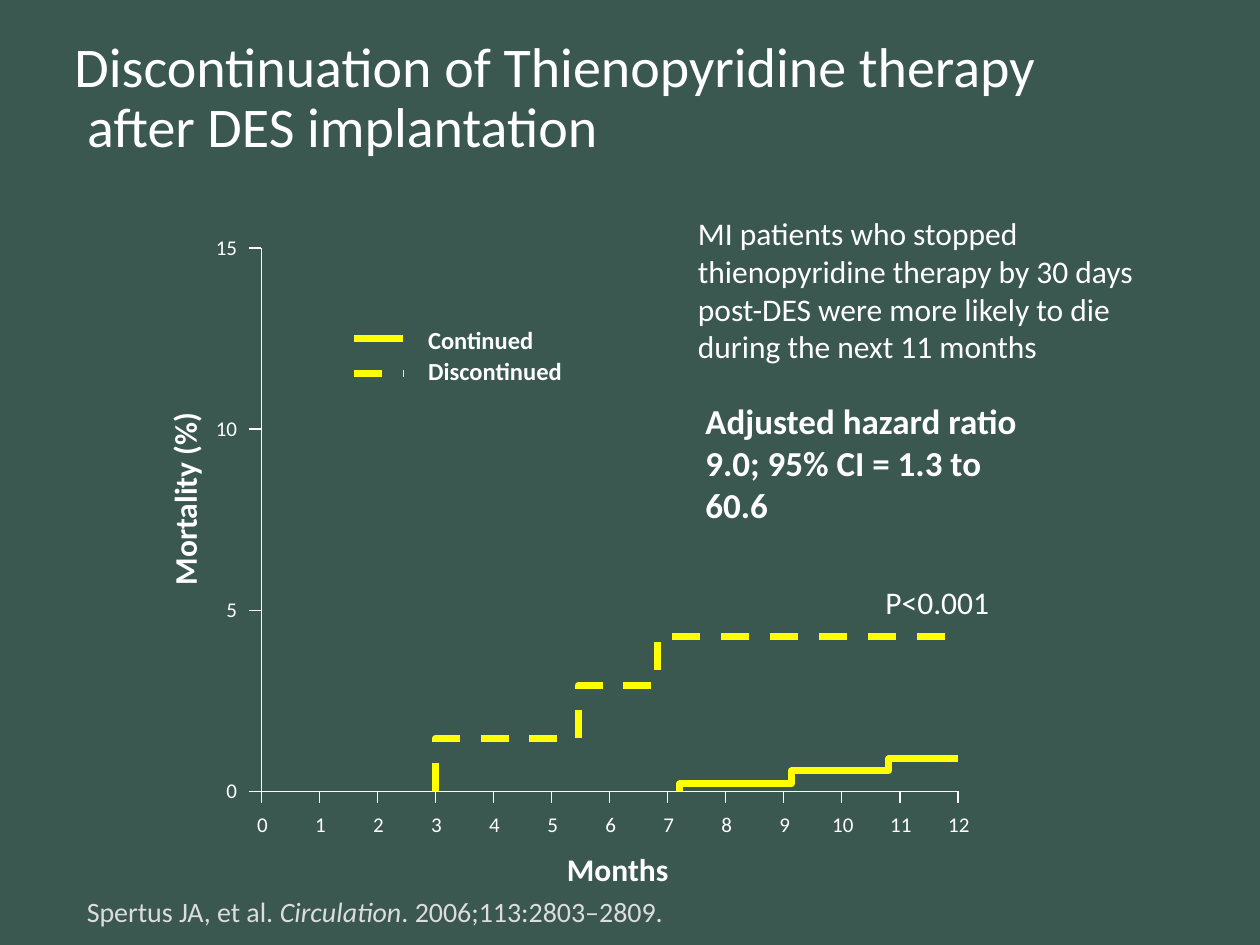
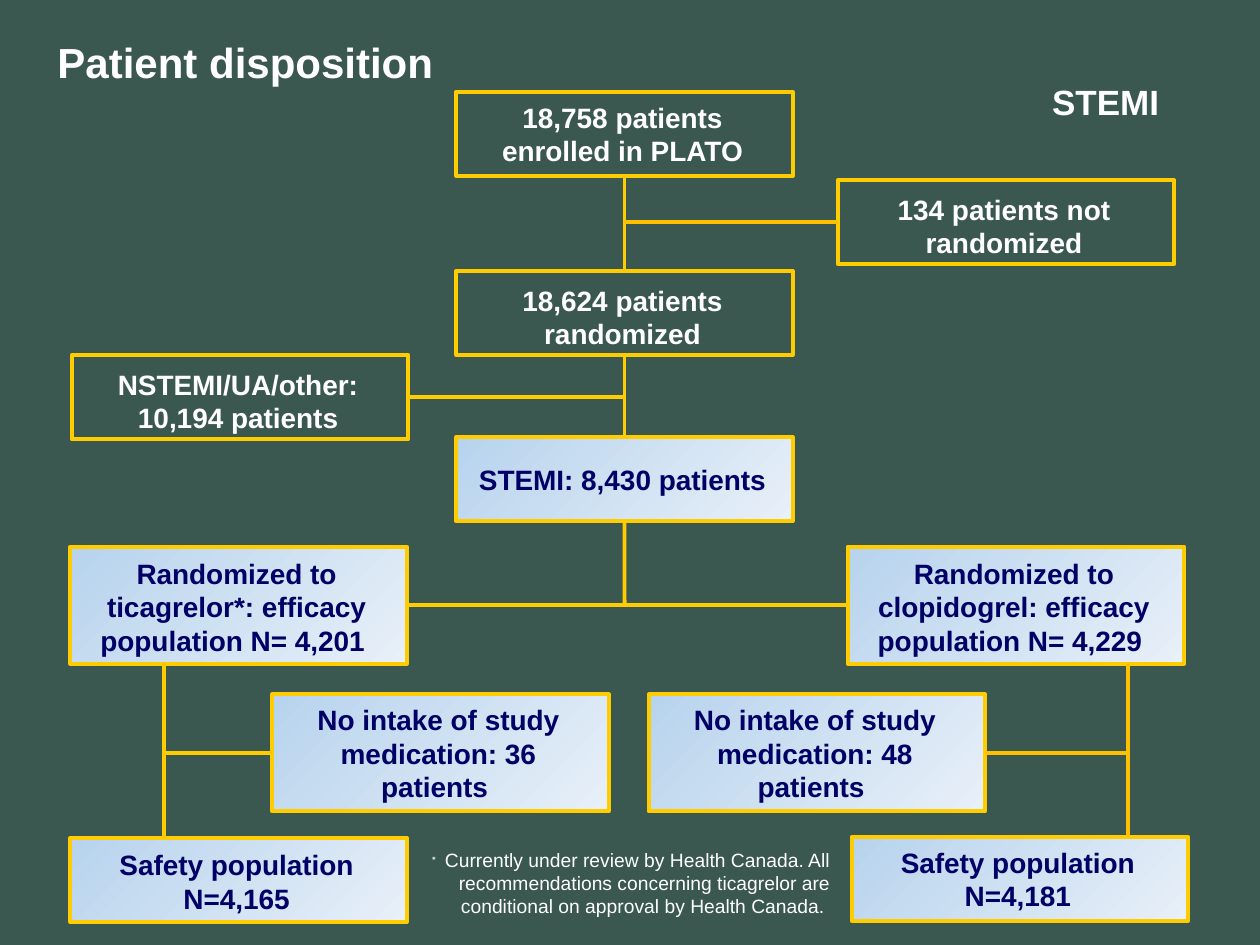
"""Builds two slides: mortality after stopping thienopyridine, and PLATO patient flow."""
from pptx import Presentation
from pptx.dml.color import RGBColor
from pptx.enum.dml import MSO_LINE
from pptx.enum.shapes import MSO_CONNECTOR, MSO_SHAPE
from pptx.enum.text import MSO_ANCHOR, PP_ALIGN
from pptx.oxml.ns import qn
from pptx.util import Cm, Pt

WHITE, YELLOW, GOLD, AMBER, NAVY = "FFFFFF", "FFFF00", "FFCC00", "FFC000", "000066"
TOP, LEFT, BOTTOM, RIGHT = range(4)
CENTERED = {"alignment": PP_ALIGN.CENTER}
RIGHT_ALIGNED = {"alignment": PP_ALIGN.RIGHT}


def write_text(shape, runs, font, color=WHITE, frame_format={}, paragraph_format={}):
    """Fill a shape with one paragraph made of (text, extra font values) runs."""
    frame = shape.text_frame
    for name, value in {"word_wrap": True, **frame_format}.items():
        setattr(frame, name, value)
    paragraph = frame.paragraphs[0]
    for name, value in paragraph_format.items():
        setattr(paragraph, name, value)
    for text, extra in runs:
        for index, line in enumerate(text.split("\n")):
            if index:
                paragraph.add_line_break()
            run = paragraph.add_run()
            run.text = line
            run.font.color.rgb = RGBColor.from_string(color)
            for name, value in {**font, **extra}.items():
                setattr(run.font, name, value)
    return paragraph


def add_line(slide, start, end, color, width, dash=None):
    """Draw a straight connector between two points given in centimetres."""
    connector = slide.shapes.add_connector(MSO_CONNECTOR.STRAIGHT, *map(Cm, start + end))
    connector.line.color.rgb = RGBColor.from_string(color)
    connector.line.width = Pt(width)
    connector.line.dash_style = dash
    properties = connector._element.spPr
    properties.append(properties.makeelement(qn("a:effectLst"), {}))
    return connector


prs = Presentation()
prs.slide_width, prs.slide_height = Cm(25.4), Cm(19.05)
backdrop = prs.slide_master.background.fill
backdrop.solid()
backdrop.fore_color.rgb = RGBColor.from_string("3A5750")
blank = prs.slide_layouts[6]

mortality = prs.slides.add_slide(blank)
calibri = {sz: {"name": "Calibri", "size": Pt(sz)} for sz in (12, 14, 16, 18, 20, 32)}
bold = {"bold": True}

headline = mortality.shapes.add_textbox(Cm(1.5), Cm(0.76), Cm(22.02), Cm(2.46))
write_text(
    headline,
    [("Discontinuation of Thienopyridine therapy\n after DES implantation", {})],
    calibri[32],
    frame_format={
        "vertical_anchor": MSO_ANCHOR.BOTTOM,
        "margin_left": 0, "margin_right": 0, "margin_top": 0, "margin_bottom": 0,
    },
    paragraph_format={"line_spacing": 0.9},
)

citation = mortality.shapes.add_textbox(Cm(1.5), Cm(17.91), Cm(12.98), Cm(0.94))
write_text(
    citation,
    [("Spertus JA, et al. ", {}), ("Circulation", {"italic": True}),
     (". 2006;113:2803–2809.", {})],
    calibri[16],
    "DDDDDD",
)

origin_x, origin_y = 5.27, 15.95
month_step, percent_step = 1.17, 0.73
axis_right = origin_x + 12 * month_step
axis_top = origin_y - 15 * percent_step
add_line(mortality, (origin_x, axis_top), (origin_x, origin_y), WHITE, 0.75)
add_line(mortality, (origin_x, origin_y), (axis_right, origin_y), WHITE, 0.75)

for percent in range(0, 16, 5):
    y = origin_y - percent * percent_step
    add_line(mortality, (origin_x - 0.25, y), (origin_x, y), WHITE, 0.75)
    tick_label = mortality.shapes.add_textbox(Cm(3.53), Cm(y - 0.4), Cm(1.5), Cm(0.79))
    write_text(tick_label, [(str(percent), {})], calibri[12], paragraph_format=RIGHT_ALIGNED)

for month in range(13):
    x = origin_x + month * month_step
    add_line(mortality, (x, origin_y), (x, origin_y + 0.23), WHITE, 0.75)
    tick_label = mortality.shapes.add_textbox(Cm(x - 0.58), Cm(16.23), Cm(1.2), Cm(0.79))
    write_text(tick_label, [(str(month), {})], calibri[12], paragraph_format=CENTERED)

annotations = [
    ("MI patients who stopped thienopyridine therapy by 30 days post-DES "
     "were more likely to die during the next 11 months",
     (13.82, 4.19, 9.86, 3.33), 18, {}, 0),
    ("Adjusted hazard ratio\n9.0; 95% CI = 1.3 to 60.6", (13.97, 7.92, 7.42, 2.82), 20, bold, 0),
    ("P<0.001", (17.6, 11.63, 3.61, 1.04), 18, {}, 0),
    ("Months", (11.18, 17.02, 3.33, 1.04), 18, bold, 0),
    ("Mortality (%)", (1.47, 9.27, 4.52, 1.04), 18, bold, 270),
    ("Continued", (8.38, 6.43, 4.2, 0.86), 14, bold, 0),
    ("Discontinued", (8.38, 7.06, 4.2, 0.86), 14, bold, 0),
]
for words, box, size, weight, rotation in annotations:
    note = mortality.shapes.add_textbox(*map(Cm, box))
    note.rotation = rotation
    write_text(note, [(words, weight)], calibri[size])

groups = [
    ([(3, 0), (3, 1.46), (5.46, 1.46), (5.46, 2.92), (6.82, 2.92), (6.82, 4.28), (12, 4.28)],
     7.52, MSO_LINE.DASH),
    ([(7.21, 0), (7.21, 0.2), (9.14, 0.2), (9.14, 0.56), (10.81, 0.56), (10.81, 0.9), (12, 0.9)],
     6.83, None),
]
for steps, legend_y, dash in groups:
    points = [
        (Cm(origin_x + month * month_step), Cm(origin_y - percent * percent_step))
        for month, percent in steps
    ]
    builder = mortality.shapes.build_freeform(*points[0])
    builder.add_line_segments(points[1:], close=False)
    curve = builder.convert_to_shape()
    curve.shadow.inherit = False
    curve.fill.background()
    curve.line.color.rgb = RGBColor.from_string(YELLOW)
    curve.line.width = Pt(4)
    curve.line.dash_style = dash
    add_line(mortality, (7.14, legend_y), (8.13, legend_y), YELLOW, 4, dash)

disposition = prs.slides.add_slide(blank)
arial = {sz: {"name": "Arial", "size": Pt(sz), "bold": True} for sz in (16, 20, 24)}

for words, box, size in [
    ("Patient disposition", (0.91, 0.61, 22.35, 1.27), 24),
    ("STEMI", (20.96, 1.5, 3.23, 1.12), 20),
]:
    heading = disposition.shapes.add_textbox(*map(Cm, box))
    write_text(heading, [(words, {})], arial[size])

box_width, low, tall, center_left = 6.78, 1.7, 2.36, 9.2
stages = {
    "enrolled": ("18,758 patients enrolled in PLATO", center_left, 1.85, low, False, 0),
    "not randomized": ("134 patients not randomized", 16.89, 3.63, low, False, 0.15),
    "randomized": ("18,624 patients randomized", center_left, 5.46, low, False, 0.15),
    "other": ("NSTEMI/UA/other: 10,194 patients", 1.45, 7.16, low, False, 0.15),
    "stemi": ("STEMI: 8,430 patients", center_left, 8.81, low, True, 0),
    "ticagrelor": ("Randomized to ticagrelor*: efficacy population N= 4,201 ",
                   1.42, 11.02, tall, True, 0.05),
    "clopidogrel": ("Randomized to clopidogrel: efficacy population N= 4,229 ",
                    17.09, 11.02, tall, True, 0.05),
    "no ticagrelor": ("No intake of study medication: 36 patients ",
                      5.49, 14, tall, True, 0),
    "no clopidogrel": ("No intake of study medication: 48 patients ",
                       13.08, 14, tall, True, 0),
    "safe ticagrelor": ("Safety population N=4,165", 1.42, 16.89, low, True, 0.05),
    "safe clopidogrel": ("Safety population N=4,181", 17.17, 16.87, low, True, 0),
}
boxes = {}
for stage, (words, left, top, height, in_stemi_arm, drop) in stages.items():
    box = disposition.shapes.add_shape(
        MSO_SHAPE.RECTANGLE, Cm(left), Cm(top), Cm(box_width), Cm(height))
    box.shadow.inherit = False
    box.line.color.rgb = RGBColor.from_string(GOLD)
    box.line.width = Pt(2.25)
    if in_stemi_arm:
        box.fill.gradient()
        box.fill.gradient_angle = 315
        for stop, tint in zip(box.fill.gradient_stops, ("B7D3ED", "E8F0F8")):
            stop.color.rgb = RGBColor.from_string(tint)
    else:
        box.fill.background()
    write_text(
        box, [(words, {})], arial[16], NAVY if in_stemi_arm else WHITE,
        frame_format={
            "vertical_anchor": MSO_ANCHOR.MIDDLE,
            "margin_left": Cm(0.38), "margin_right": Cm(0.46),
            "margin_top": Cm(drop), "margin_bottom": 0,
        },
        paragraph_format=CENTERED,
    )
    boxes[stage] = box

trunk_x, ticagrelor_x, clopidogrel_x = center_left + box_width / 2, 3.3, 22.73
arms_y, intake_y = 12.2, 15.18
links = [
    ((trunk_x, 3.55), (trunk_x, 5.46), GOLD, ("enrolled", BOTTOM), ("randomized", TOP)),
    ((trunk_x, 4.48), (16.89, 4.48), AMBER, None, ("not randomized", LEFT)),
    ((trunk_x, 7.16), (trunk_x, 8.81), GOLD, ("randomized", BOTTOM), ("stemi", TOP)),
    ((8.23, 8.01), (trunk_x, 8.01), GOLD, ("other", RIGHT), None),
    ((trunk_x, 10.51), (trunk_x, arms_y), GOLD, ("stemi", BOTTOM), None),
    ((8.2, arms_y), (17.09, arms_y), GOLD, ("ticagrelor", RIGHT), ("clopidogrel", LEFT)),
    ((ticagrelor_x, 13.38), (ticagrelor_x, 16.89), GOLD, None, None),
    ((clopidogrel_x, 13.38), (clopidogrel_x, 16.87), AMBER, None, None),
    ((5.49, intake_y), (ticagrelor_x, intake_y), GOLD, ("no ticagrelor", LEFT), None),
    ((19.86, intake_y), (clopidogrel_x, intake_y), AMBER, ("no clopidogrel", RIGHT), None),
]
for start, end, color, source, target in links:
    link = add_line(disposition, start, end, color, 2.25)
    if source:
        link.begin_connect(boxes[source[0]], source[1])
    if target:
        link.end_connect(boxes[target[0]], target[1])

footnote = disposition.shapes.add_textbox(Cm(8), Cm(16.97), Cm(8.99), Cm(1.68))
review_note = write_text(
    footnote,
    [("∗", {}),
     (" Currently under review by Health Canada. All recommendations concerning "
      "ticagrelor are conditional on approval by Health Canada. ", {})],
    {"name": "Arial", "size": Pt(11)},
    paragraph_format=RIGHT_ALIGNED,
)
review_note.runs[0]._r.get_or_add_rPr().set("baseline", "30000")

prs.save("out.pptx")
